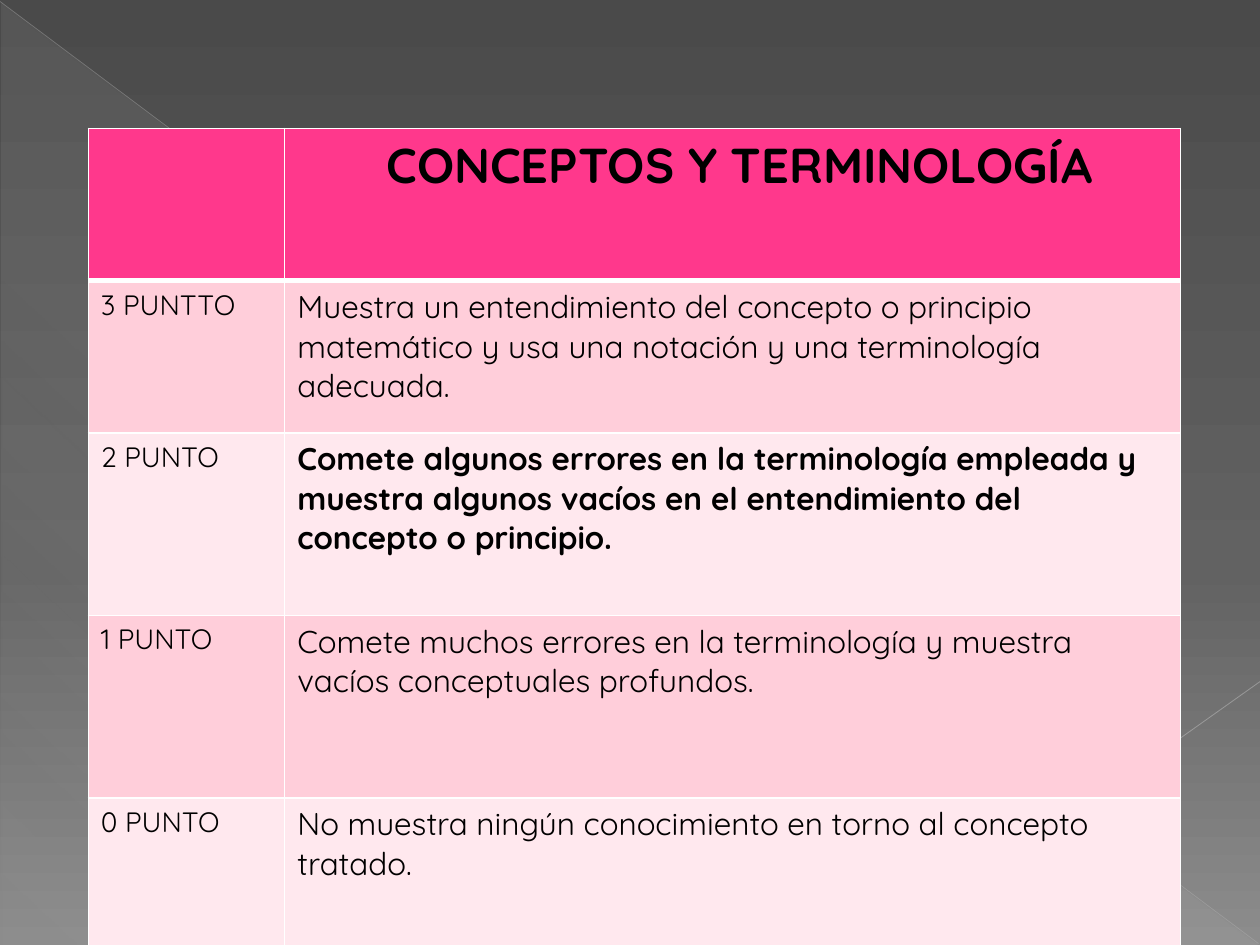
from dataclasses import dataclass

import lxml.etree
import pptx
import pptx.dml.color
import pptx.enum.shapes
import pptx.enum.text
import pptx.oxml.ns
import pptx.util

Cm = pptx.util.Cm
Pt = pptx.util.Pt
qn = pptx.oxml.ns.qn

COLORS = {
    "night": "4A4A4A",
    "slate": "626262",
    "ash": "8C8C8C",
    "veil": "D2D2D2",
    "diagonal": "BFBFBF",
    "corner": "C6C6C6",
    "header": "FF388C",
    "band_dark": "FFCEDA",
    "band_light": "FFE8EE",
    "border": "FFFFFF",
    "ink": "000000",
}
FONT = "Quicksand"


@dataclass
class Stop:
    position: int
    color: str
    opacity: int = 100


@dataclass
class Ray:
    start: tuple[float, float]
    end: tuple[float, float]
    color: str
    width: float
    opacity: int


@dataclass
class Level:
    label: str
    description: str
    height: float
    bold: bool = False


BACKDROP = [Stop(0, "night"), Stop(60, "slate"), Stop(100, "ash")]
VEIL = [Stop(0, "veil", 10), Stop(70, "veil", 8), Stop(100, "veil", 1)]
RAYS = [
    Ray((0, 0.03), (25.37, 19.02), "diagonal", 0.39, 35),
    Ray((25.4, 13.74), (17.96, 19.02), "corner", 0.47, 45),
]
HEADING = " CONCEPTOS Y TERMINOLOGÍA"
HEADING_HEIGHT = 3.07
LEVELS = [
    Level("3 PUNTTO", "Muestra un entendimiento del concepto o principio matemático "
          "y usa una notación y una terminología adecuada.", 3.07),
    Level("2 PUNTO", "Comete algunos errores en la terminología empleada y muestra "
          "algunos vacíos en el entendimiento del concepto o principio.", 3.68, True),
    Level("1 PUNTO", "Comete muchos errores en la terminología y muestra vacíos "
          "conceptuales profundos.", 3.68),
    Level("0 PUNTO", "No muestra ningún conocimiento en torno al concepto tratado.", 3.68),
]
COLUMN_WIDTHS = [3.96, 18.06]


def rgb(name: str) -> pptx.dml.color.RGBColor:
    return pptx.dml.color.RGBColor.from_string(COLORS[name])


def add_color(parent, name: str, opacity: int = 100) -> None:
    color = lxml.etree.SubElement(parent, qn("a:srgbClr"), val=COLORS[name])
    if opacity < 100:
        lxml.etree.SubElement(color, qn("a:alpha"), val=str(opacity * 1000))


def paint_gradient(fill, owner, stops: list[Stop], angle: int) -> None:
    fill.gradient()
    gradient = owner.find(".//" + qn("a:gradFill"))
    for child in list(gradient):
        gradient.remove(child)
    stop_list = lxml.etree.SubElement(gradient, qn("a:gsLst"))
    for stop in stops:
        entry = lxml.etree.SubElement(stop_list, qn("a:gs"), pos=str(stop.position * 1000))
        add_color(entry, stop.color, stop.opacity)
    lxml.etree.SubElement(gradient, qn("a:lin"), ang=str(angle * 60000), scaled="0")


def draw_veil(slide) -> None:
    veil = slide.shapes.add_shape(
        pptx.enum.shapes.MSO_SHAPE.RIGHT_TRIANGLE, Cm(0.03), Cm(0.05), Cm(25.35), Cm(19))
    veil.shadow.inherit = False
    veil.line.fill.background()
    paint_gradient(veil.fill, veil.element, VEIL, 133)


def draw_ray(slide, ray: Ray) -> None:
    line = slide.shapes.add_connector(
        pptx.enum.shapes.MSO_CONNECTOR.STRAIGHT, *map(Cm, ray.start + ray.end))
    line.line.color.rgb = rgb(ray.color)
    line.line.width = Pt(ray.width)
    color = line.element.spPr.find(".//" + qn("a:srgbClr"))
    lxml.etree.SubElement(color, qn("a:alpha"), val=str(ray.opacity * 1000))
    lxml.etree.SubElement(line.element.spPr, qn("a:effectLst"))


def style_cell(cell, fill: str, top: float = 1, bottom: float = 1) -> None:
    properties = cell._tc.get_or_add_tcPr()
    for side, width in (("L", 1), ("R", 1), ("T", top), ("B", bottom)):
        border = lxml.etree.SubElement(properties, qn(f"a:ln{side}"), w=str(Pt(width)))
        add_color(lxml.etree.SubElement(border, qn("a:solidFill")), "border")
    cell.fill.solid()
    cell.fill.fore_color.rgb = rgb(fill)


def write_cell(cell, text: str, size: int, bold: bool = False) -> None:
    cell.text_frame.text = text
    font = cell.text_frame.paragraphs[0].runs[0].font
    font.name = FONT
    font.size = Pt(size)
    font.bold = bold
    font.color.rgb = rgb("ink")


def draw_rubric(slide) -> None:
    heights = [HEADING_HEIGHT] + [level.height for level in LEVELS]
    rubric = slide.shapes.add_table(
        len(heights), len(COLUMN_WIDTHS), Cm(1.78), Cm(2.59),
        Cm(sum(COLUMN_WIDTHS)), Cm(sum(heights))).table
    for column, width in zip(rubric.columns, COLUMN_WIDTHS):
        column.width = Cm(width)
    for row, height in zip(rubric.rows, heights):
        row.height = Cm(height)

    for cell in rubric.rows[0].cells:
        style_cell(cell, "header", bottom=3)
    heading = rubric.cell(0, 1)
    write_cell(heading, HEADING, 28, True)
    heading.text_frame.paragraphs[0].alignment = pptx.enum.text.PP_ALIGN.CENTER

    for number, level in enumerate(LEVELS, start=1):
        label, description = rubric.rows[number].cells
        for cell in (label, description):
            style_cell(cell, "band_dark" if number % 2 else "band_light",
                       top=3 if number == 1 else 1)
        write_cell(label, level.label, 16)
        write_cell(description, level.description, 18, level.bold)


def main() -> None:
    presentation = pptx.Presentation()
    presentation.slide_width = Cm(25.4)
    presentation.slide_height = Cm(19.05)
    slide = presentation.slides.add_slide(presentation.slide_layouts[6])
    paint_gradient(slide.background.fill, slide.element, BACKDROP, 90)
    draw_veil(slide)
    for ray in RAYS:
        draw_ray(slide, ray)
    draw_rubric(slide)
    presentation.save("out.pptx")


if __name__ == "__main__":
    main()
